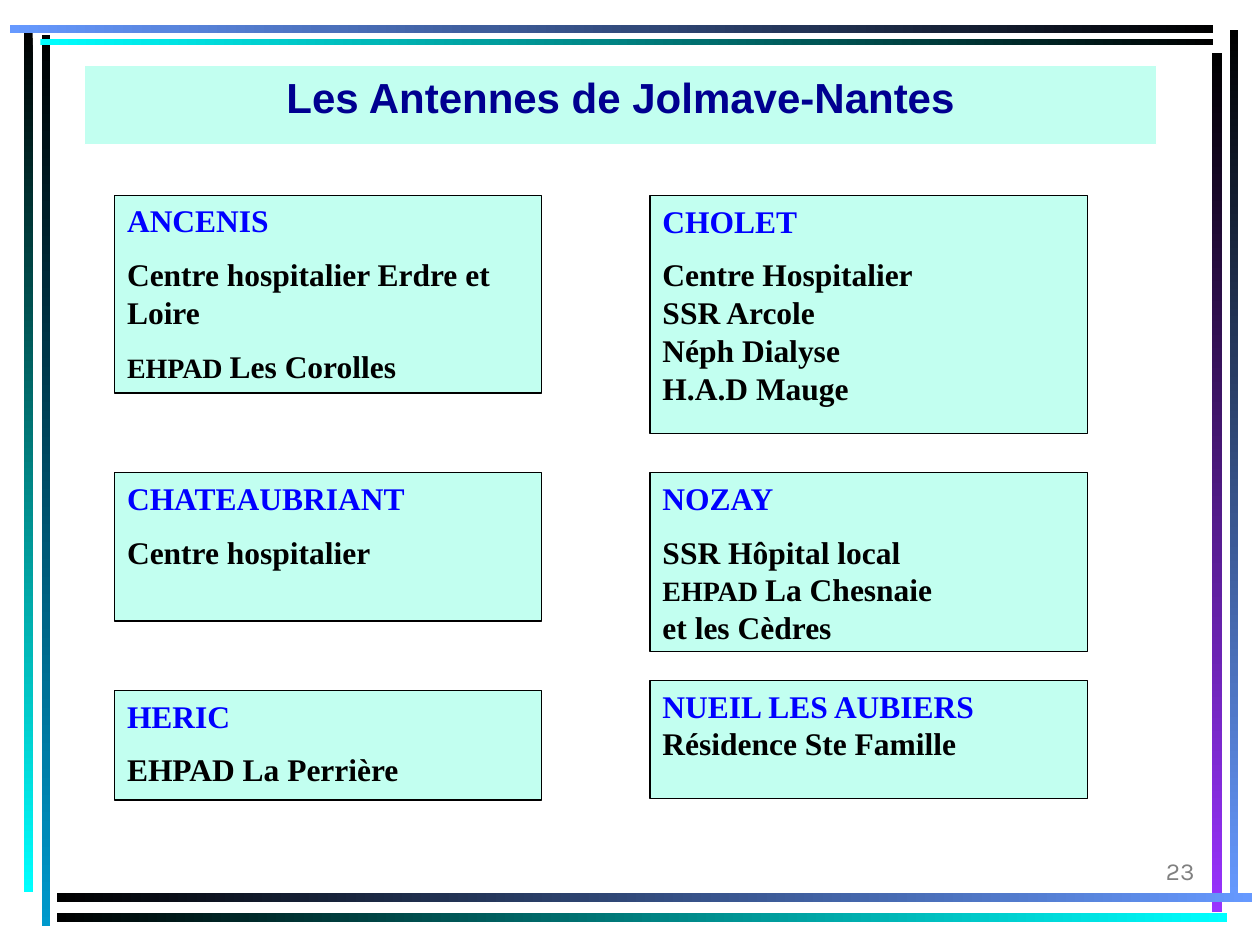
from pptx import Presentation
from pptx.dml.color import RGBColor
from pptx.enum.shapes import MSO_SHAPE
from pptx.enum.text import MSO_ANCHOR, MSO_AUTO_SIZE, PP_ALIGN
from pptx.util import Inches, Pt

RECTANGLE = MSO_SHAPE.RECTANGLE
TOP, BOTTOM = MSO_ANCHOR.TOP, MSO_ANCHOR.BOTTOM
LEFT, CENTER, RIGHT = PP_ALIGN.LEFT, PP_ALIGN.CENTER, PP_ALIGN.RIGHT
NO_AUTO_SIZE = MSO_AUTO_SIZE.NONE

BLACK = RGBColor(0x00, 0x00, 0x00)
WHITE = RGBColor(0xFF, 0xFF, 0xFF)
GRAY = RGBColor(0x80, 0x80, 0x80)
MINT = RGBColor(0xC2, 0xFF, 0xF0)
NAVY = RGBColor(0x00, 0x00, 0x90)
BLUE = RGBColor(0x00, 0x00, 0xFF)
SKY = RGBColor(0x66, 0x99, 0xFF)
CYAN = RGBColor(0x00, 0xFF, 0xFF)
TEAL = RGBColor(0x00, 0x99, 0xCC)
PURPLE = RGBColor(0x99, 0x33, 0xFF)

RIGHTWARD, DOWNWARD = 0, 270
LEFT_COLUMN, RIGHT_COLUMN = (0.91, 3.39), (5.16, 3.47)
EHPAD = ("EHPAD ", 16)

BARS = [
    (0.33, 0.28, 0.07, 7.07, BLACK, TEAL, DOWNWARD),
    (0.19, 0.25, 0.07, 6.83, BLACK, CYAN, DOWNWARD),
    (9.76, 0.24, 0.07, 6.91, BLACK, SKY, DOWNWARD),
    (9.62, 0.42, 0.08, 6.82, BLACK, PURPLE, DOWNWARD),
    (0.45, 7.09, 9.49, 0.07, BLACK, SKY, RIGHTWARD),
    (0.45, 7.25, 9.29, 0.07, BLACK, CYAN, RIGHTWARD),
    (0.32, 0.31, 9.31, 0.05, CYAN, BLACK, RIGHTWARD),
    (0.08, 0.2, 9.55, 0.06, SKY, BLACK, RIGHTWARD),
]

BRANCHES = [
    (LEFT_COLUMN, 1.55, 1.57, [
        ["ANCENIS"],
        ["Centre hospitalier Erdre et Loire"],
        [[EHPAD, ("Les Corolles", 18)]],
    ]),
    (LEFT_COLUMN, 3.75, 1.18, [["CHATEAUBRIANT"], ["Centre hospitalier"]]),
    (LEFT_COLUMN, 5.48, 0.87, [["HERIC"], ["EHPAD La Perrière"]]),
    (RIGHT_COLUMN, 1.55, 1.89, [
        ["CHOLET"],
        ["Centre Hospitalier", "SSR Arcole", "Néph Dialyse", "H.A.D Mauge"],
    ]),
    (RIGHT_COLUMN, 3.75, 1.42, [
        ["NOZAY"],
        ["SSR Hôpital local", [EHPAD, ("La Chesnaie", 18)], "et les Cèdres"],
    ]),
    (RIGHT_COLUMN, 5.4, 0.94, [["NUEIL LES AUBIERS", "Résidence Ste Famille"]]),
]


class SlideBuilder:
    body_font = "Times New Roman"
    title_font = "Arial"
    number_font = "Karla"
    body_size = 18
    group_gap = Pt(9.2)

    def __init__(self, slide):
        self.slide = slide

    def place(self, shape, left, top, width, height):
        shape.left, shape.top = Inches(left), Inches(top)
        shape.width, shape.height = Inches(width), Inches(height)

    def rectangle(self, left, top, width, height):
        shape = self.slide.shapes.add_shape(
            RECTANGLE, Inches(left), Inches(top), Inches(width), Inches(height))
        shape.shadow.inherit = False
        return shape

    def panel(self, shape, line_color):
        shape.fill.solid()
        shape.fill.fore_color.rgb = MINT
        shape.line.color.rgb = line_color
        shape.line.width = Pt(0.75)

    def frame(self, shape, anchor):
        text_frame = shape.text_frame
        text_frame.word_wrap = True
        text_frame.auto_size = NO_AUTO_SIZE
        text_frame.vertical_anchor = anchor
        return text_frame

    def run(self, paragraph, text, size, font, color, bold=True):
        run = paragraph.add_run()
        run.text = text
        run.font.name = font
        run.font.size = Pt(size)
        run.font.bold = bold
        run.font.color.rgb = color

    def bar(self, left, top, width, height, start, end, angle):
        shape = self.rectangle(left, top, width, height)
        shape.line.fill.background()
        shape.fill.gradient()
        shape.fill.gradient_angle = angle
        for stop, color in zip(shape.fill.gradient_stops, (start, end)):
            stop.color.rgb = color

    def title(self, text, left, top, width, height):
        shape = self.slide.shapes.title
        self.place(shape, left, top, width, height)
        self.panel(shape, WHITE)
        paragraph = self.frame(shape, TOP).paragraphs[0]
        paragraph.alignment = CENTER
        self.run(paragraph, text, 24, self.title_font, NAVY)

    def branch(self, column, top, height, groups):
        left, width = column
        shape = self.rectangle(left, top, width, height)
        self.panel(shape, BLACK)
        text_frame = self.frame(shape, TOP)
        paragraph, color = text_frame.paragraphs[0], BLUE
        for group in groups:
            for line in group:
                if color == BLACK:
                    paragraph = text_frame.add_paragraph()
                paragraph.alignment = LEFT
                runs = [(line, self.body_size)] if isinstance(line, str) else line
                for text, size in runs:
                    self.run(paragraph, text, size, self.body_font, color)
                color = BLACK
            if group is not groups[-1]:
                paragraph.space_after = self.group_gap

    def slide_number(self, text, left, top, width, height):
        shape = self.slide.shapes.add_textbox(
            Inches(left), Inches(top), Inches(width), Inches(height))
        paragraph = self.frame(shape, BOTTOM).paragraphs[0]
        paragraph.alignment = RIGHT
        self.run(paragraph, text, 14, self.number_font, GRAY, bold=False)


def main():
    presentation = Presentation()
    presentation.slide_width = Inches(10)
    presentation.slide_height = Inches(7.5)
    slide = presentation.slides.add_slide(presentation.slide_layouts[5])
    builder = SlideBuilder(slide)
    for bar in BARS:
        builder.bar(*bar)
    builder.title("Les Antennes de Jolmave-Nantes", 0.67, 0.52, 8.51, 0.63)
    for branch in BRANCHES:
        builder.branch(*branch)
    builder.slide_number("23", 7.5, 6.58, 2.08, 0.5)
    presentation.save("out.pptx")


if __name__ == "__main__":
    main()
